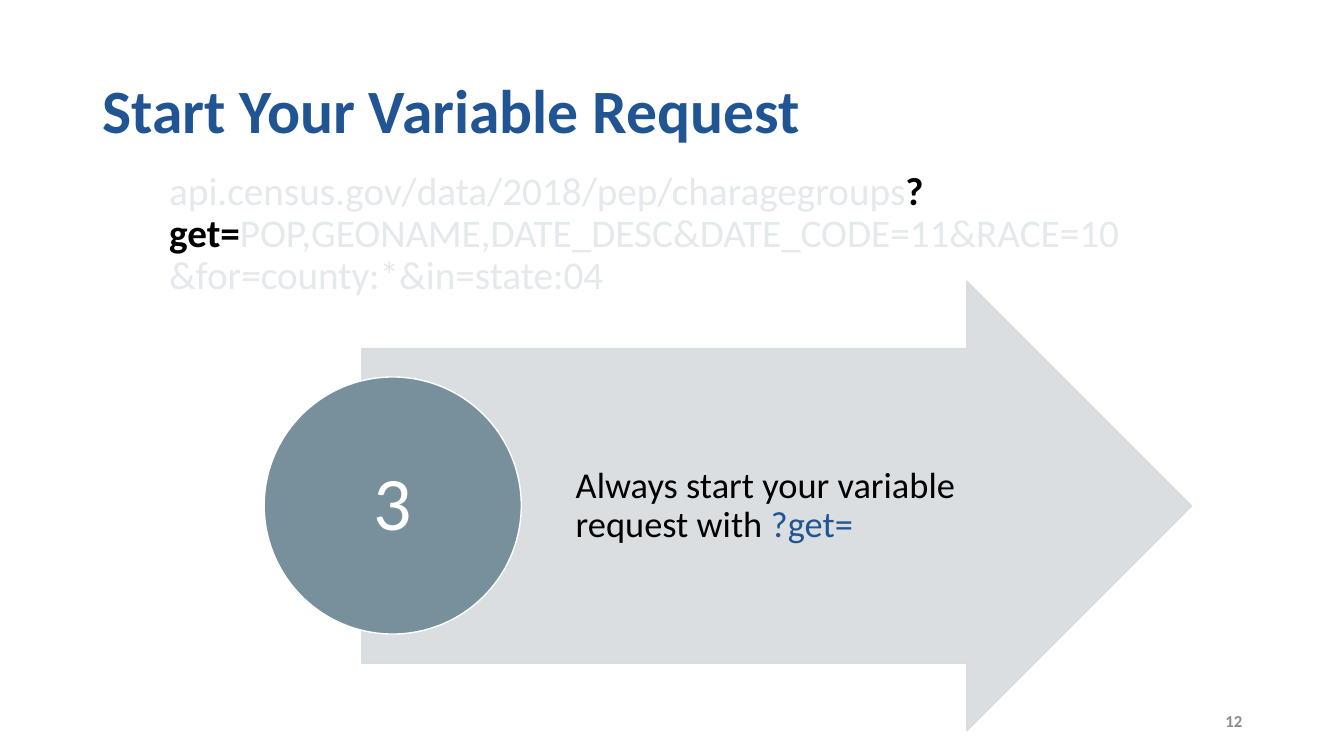
from dataclasses import dataclass

import lxml.etree
import pptx
import pptx.dml.color
import pptx.enum.shapes
import pptx.enum.text
import pptx.oxml.ns
import pptx.util

Inches = pptx.util.Inches
Shape = pptx.enum.shapes.MSO_SHAPE
Anchor = pptx.enum.text.MSO_ANCHOR
Align = pptx.enum.text.PP_ALIGN


@dataclass(frozen=True)
class Theme:
    font: str = "Calibri"
    blue: str = "205493"
    black: str = "000000"
    white: str = "FFFFFF"
    faded: str = "E4E9EB"
    arrow: str = "D6DBDE"
    circle: str = "78909C"
    grey: str = "8C8C8C"
    title: int = 44
    address: int = 28
    body: int = 26
    step: int = 54
    footer: int = 12


class SlideBuilder:
    def __init__(self, page, theme):
        self.page = page
        self.theme = theme

    def color(self, value):
        return pptx.dml.color.RGBColor.from_string(value)

    def fill_text(self, shape, spans, size, bold=None, align=Align.LEFT,
                  anchor=Anchor.MIDDLE, insets=(0.1, 0.05, 0.1, 0.05), spacing=0.9):
        frame = shape.text_frame
        frame.word_wrap = True
        frame.vertical_anchor = anchor
        frame.margin_left, frame.margin_top, frame.margin_right, frame.margin_bottom = map(Inches, insets)
        para = frame.paragraphs[0]
        para.alignment = align
        para.line_spacing = spacing
        para.font.name = self.theme.font
        para.font.size = pptx.util.Pt(size)
        para.font.bold = bold
        if len(spans) == 1:
            para.font.color.rgb = self.color(spans[0][1])
        for text, color, *strong in spans:
            span = para.add_run()
            span.text = text
            if len(spans) > 1:
                span.font.color.rgb = self.color(color)
            if strong:
                span.font.bold = strong[0]

    def text(self, place, spans, size, **style):
        box = self.page.shapes.add_textbox(*map(Inches, place))
        self.fill_text(box, spans, size, **style)

    def shape(self, kind, place, fill, line, opacity=100):
        shape = self.page.shapes.add_shape(kind, *map(Inches, place))
        shape.shadow.inherit = False
        shape.fill.solid()
        shape.fill.fore_color.rgb = self.color(fill)
        shape.line.color.rgb = self.color(line)
        shape.line.width = pptx.util.Pt(1)
        if opacity < 100:
            qn = pptx.oxml.ns.qn
            for color in shape.element.spPr.iter(qn("a:srgbClr")):
                lxml.etree.SubElement(color, qn("a:alpha"), val=str(opacity * 1000))
        return shape


def main():
    deck = pptx.Presentation()
    deck.slide_width, deck.slide_height = Inches(13.33), Inches(7.5)
    theme = Theme()
    slide = SlideBuilder(deck.slides.add_slide(deck.slide_layouts[6]), theme)

    slide.text((0.92, 0.4, 11.5, 1.45), [("Start Your Variable Request", theme.blue)],
               theme.title, bold=True)
    slide.text((1.58, 1.65, 9.75, 4.95), [
        ("api.census.gov/data/2018/pep/charagegroups", theme.faded),
        ("?get=", theme.black, True),
        ("POP,GEONAME,DATE_DESC&DATE_CODE=11&RACE=10&for=county:*&in=state:04", theme.faded),
    ], theme.address, anchor=Anchor.TOP)

    arrow = slide.shape(Shape.RIGHT_ARROW, (3.59, 2.79, 8.23, 4.46),
                        theme.arrow, theme.arrow, opacity=90)
    arrow.adjustments[0] = 0.7
    arrow.adjustments[1] = 0.5
    slide.text((5.64, 3.46, 4.61, 3.12), [
        ("Always start your variable request with ", theme.black),
        ("?get=", theme.blue),
    ], theme.body, insets=(0.07, 0.02, 0.04, 0.02))

    circle = slide.shape(Shape.OVAL, (2.62, 3.74, 2.55, 2.55), theme.circle, theme.white)
    slide.fill_text(circle, [("3", theme.white)], theme.step, align=Align.CENTER, insets=(0.04,) * 4)

    slide.text((9.42, 6.95, 3, 0.4), [("12", theme.grey)], theme.footer,
               bold=True, align=Align.RIGHT, spacing=1.0)

    deck.save("out.pptx")


if __name__ == "__main__":
    main()
